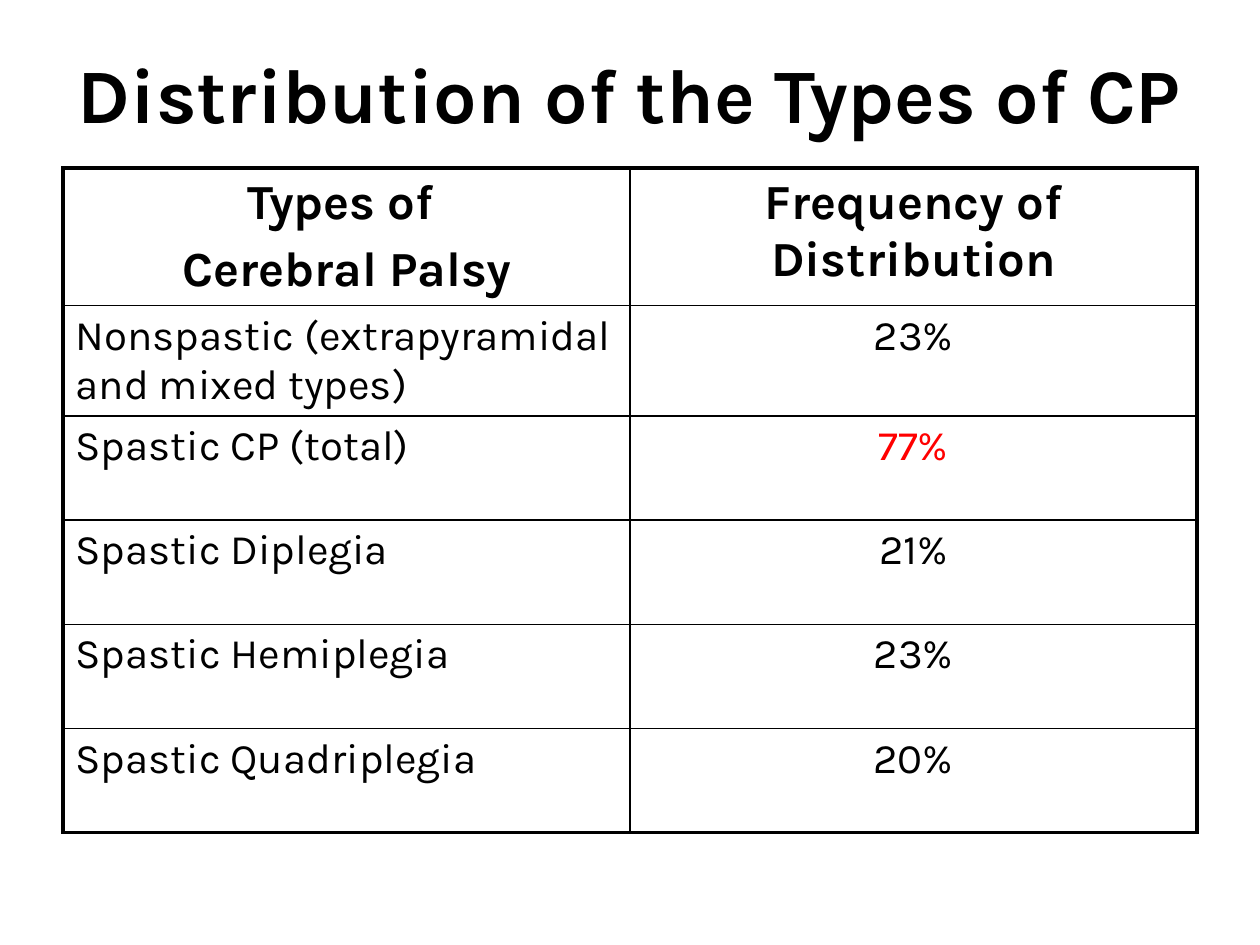
from dataclasses import dataclass

from lxml.etree import SubElement
from pptx import Presentation
from pptx.dml.color import RGBColor
from pptx.enum.text import MSO_ANCHOR as Anchor, MSO_AUTO_SIZE as AutoSize, PP_ALIGN as Align
from pptx.oxml.ns import qn
from pptx.util import Cm, Pt


@dataclass(frozen=True)
class Theme:
    font: str = "Karla"
    ink: str = "000000"
    accent: str = "FF0000"
    title: int = 44
    header: int = 28
    body: int = 24
    frame: float = 2.25
    rule: float = 1


class SlideBuilder:
    """Adds styled elements to one slide."""

    def __init__(self, slide, theme):
        self.slide = slide
        self.theme = theme

    def add_lines(self, frame, lines, size, align, bold=False, color=None):
        for index, line in enumerate(lines):
            paragraph = frame.paragraphs[0] if index == 0 else frame.add_paragraph()
            paragraph.alignment = align
            paragraph.space_before = Pt(size * 0.2 if index else 0)
            run = paragraph.add_run()
            run.text = line
            run.font.name = self.theme.font
            run.font.size = Pt(size)
            run.font.bold = bold
            run.font.color.rgb = RGBColor.from_string(color or self.theme.ink)

    def title(self, wording, left, top, width, height):
        heading = self.slide.shapes.title
        heading.left, heading.top = Cm(left), Cm(top)
        heading.width, heading.height = Cm(width), Cm(height)
        frame = heading.text_frame
        frame.word_wrap = True
        frame.auto_size = AutoSize.NONE
        frame.vertical_anchor = Anchor.MIDDLE
        self.add_lines(frame, [wording], self.theme.title, Align.CENTER, bold=True)

    def borders(self, cell, outer_sides):
        properties = cell._tc.get_or_add_tcPr()
        for position, side in enumerate("LRTB"):
            weight = self.theme.frame if side in outer_sides else self.theme.rule
            line = SubElement(properties, qn(f"a:ln{side}"), w=str(Pt(weight)))
            fill = SubElement(line, qn("a:solidFill"))
            SubElement(fill, qn("a:srgbClr"), val=self.theme.ink)
            properties.insert(position, line)

    def table(self, headers, records, highlight, left, top, width, row_height):
        row_count = len(records) + 1
        table = self.slide.shapes.add_table(
            row_count, len(headers), Cm(left), Cm(top), Cm(width), Cm(row_height * row_count)
        ).table
        table.first_row = table.horz_banding = False
        for row in table.rows:
            row.height = Cm(row_height)
        last_row, last_column = row_count - 1, len(headers) - 1
        for r, record in enumerate([headers, *([[text] for text in pair] for pair in records)]):
            for c, lines in enumerate(record):
                cell = table.cell(r, c)
                cell.fill.background()
                self.add_lines(
                    cell.text_frame,
                    lines,
                    self.theme.body if r else self.theme.header,
                    Align.LEFT if r and c == 0 else Align.CENTER,
                    bold=r == 0,
                    color=self.theme.accent if highlight in lines else None,
                )
                edges = {"L": c == 0, "R": c == last_column, "T": r == 0, "B": r == last_row}
                self.borders(cell, [side for side, outer in edges.items() if outer])


def main():
    deck = Presentation()
    deck.slide_width, deck.slide_height = Cm(25.4), Cm(19.05)
    builder = SlideBuilder(deck.slides.add_slide(deck.slide_layouts[5]), Theme())
    builder.title("Distribution of the Types of CP", 1.27, 0.3, 22.86, 3.15)
    frequencies = [
        ("Nonspastic (extrapyramidal and mixed types)", "23%"),
        ("Spastic CP (total)", "77%"),
        ("Spastic Diplegia", "21%"),
        ("Spastic Hemiplegia", "23%"),
        ("Spastic Quadriplegia", "20%"),
    ]
    headers = [["Types of ", "Cerebral Palsy"], ["Frequency of Distribution"]]
    builder.table(headers, frequencies, "77%", 1.27, 3.39, 22.86, 2.1)
    deck.save("out.pptx")


if __name__ == "__main__":
    main()
